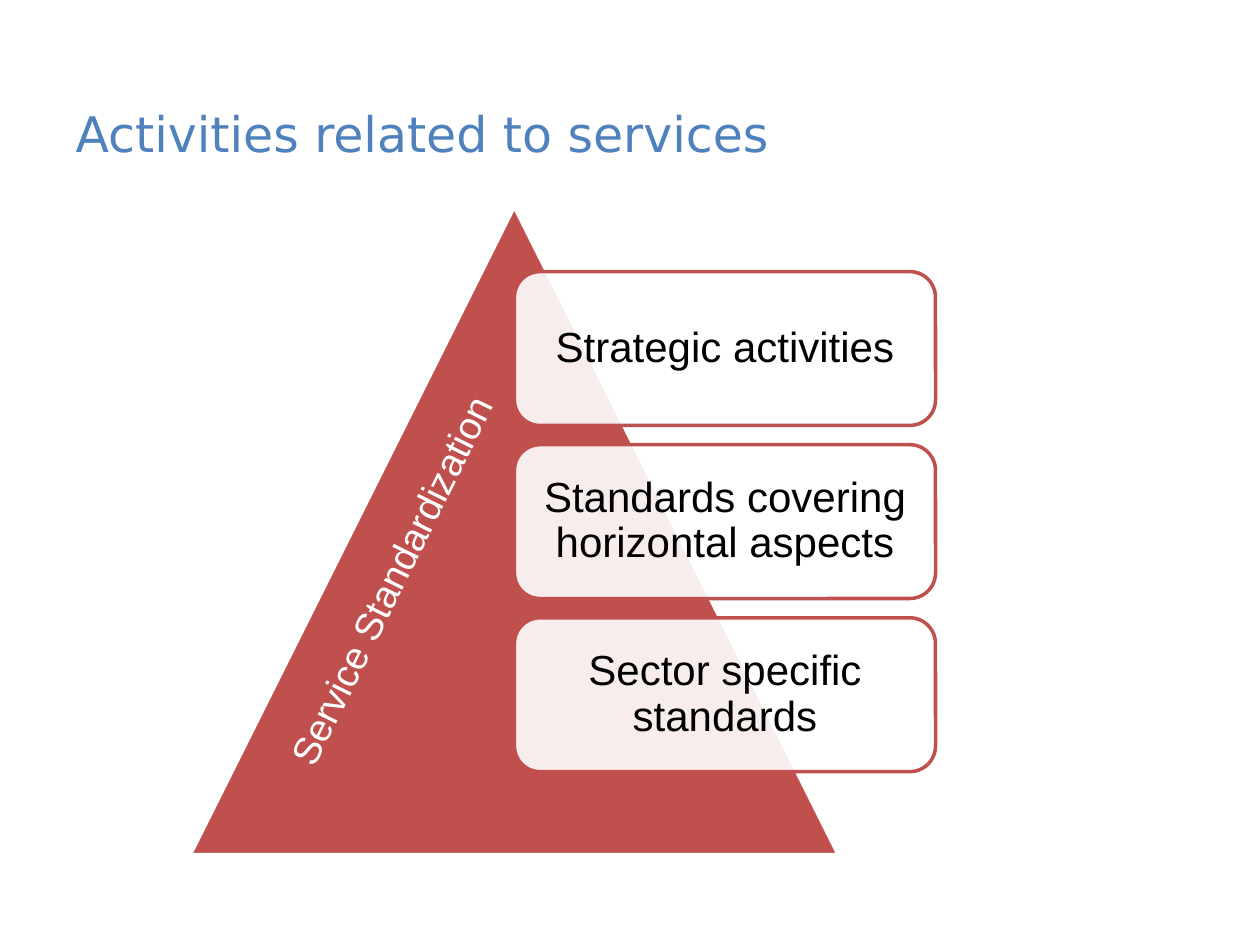
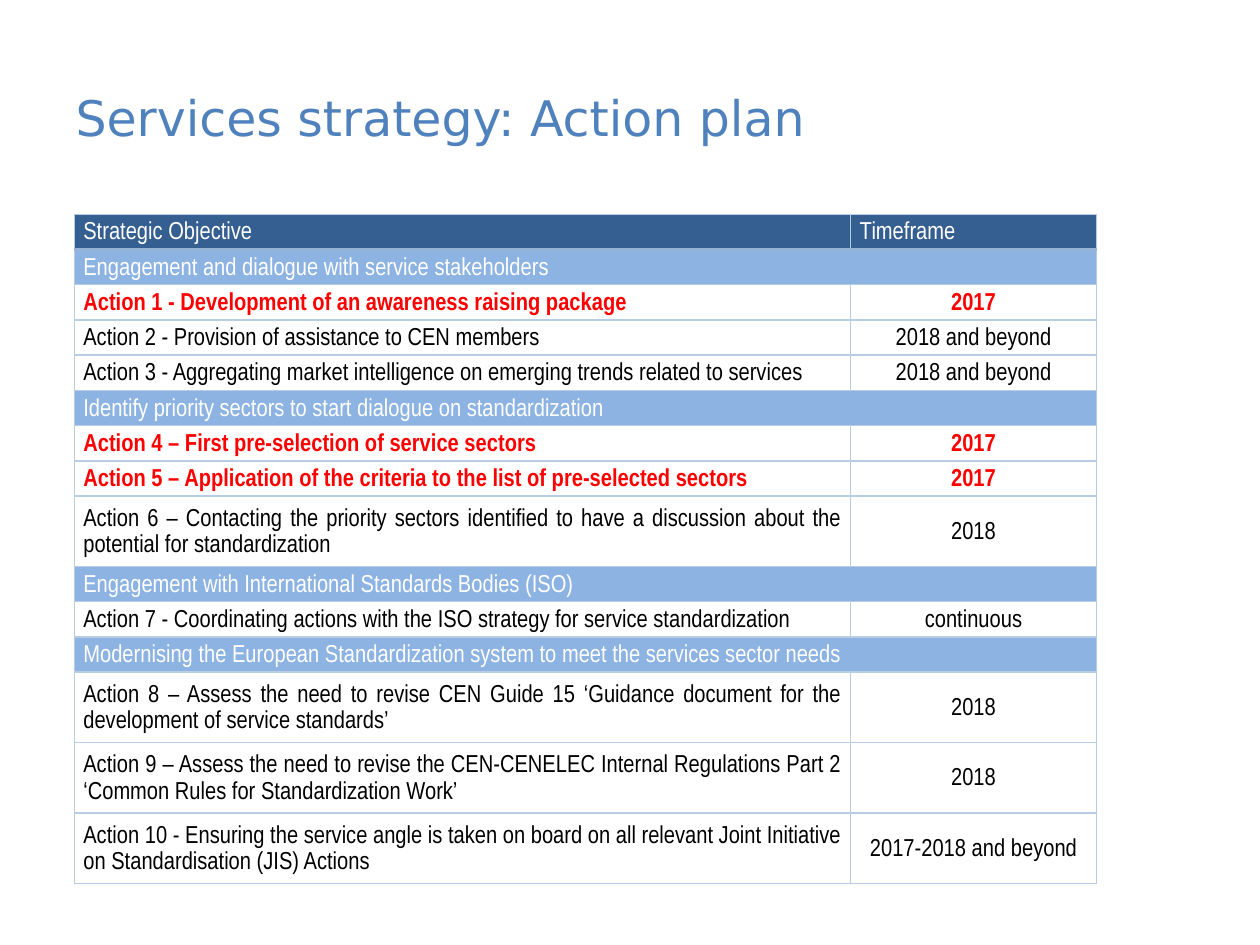
from lxml import etree
from pptx import Presentation
from pptx.dml.color import RGBColor
from pptx.enum.shapes import MSO_SHAPE
from pptx.enum.text import MSO_ANCHOR, PP_ALIGN
from pptx.oxml.ns import qn
from pptx.util import Cm, Pt

TRIANGLE, CARD = MSO_SHAPE.ISOSCELES_TRIANGLE, MSO_SHAPE.ROUNDED_RECTANGLE
MIDDLE = MSO_ANCHOR.MIDDLE
LEFT, CENTER, JUSTIFY = PP_ALIGN.LEFT, PP_ALIGN.CENTER, PP_ALIGN.JUSTIFY
TITLE_ONLY = 5

COLORS = {
    "title": "4F81BD",
    "accent": "C0504D",
    "white": "FFFFFF",
    "text": "000000",
    "header": "365F91",
    "section": "8DB3E2",
    "current": "FF0000",
    "border": "B8CCE4",
    "header_rule": "95B3D7",
}
TITLE_FONT, DIAGRAM_FONT, TABLE_FONT = "DejaVu Sans", "Arial", "Arial Narrow"

ACTIVITIES = [
    "Strategic activities",
    "Standards covering horizontal aspects",
    "Sector specific standards",
]

# Each section holds its actions as (description, timeframe)
PLAN = {
    "Engagement and dialogue with service stakeholders": [
        ("Action 1 - Development of an awareness raising package", "2017"),
        ("Action 2 - Provision of assistance to CEN members", "2018 and beyond"),
        ("Action 3 - Aggregating market intelligence on emerging trends related to services",
         "2018 and beyond"),
    ],
    "Identify priority sectors to start dialogue on standardization": [
        ("Action 4 – First pre-selection of service sectors", "2017"),
        ("Action 5 – Application of the criteria to the list of pre-selected sectors", "2017"),
        ("Action 6 – Contacting the priority sectors identified to have a discussion "
         "about the potential for standardization", "2018"),
    ],
    "Engagement with International Standards Bodies (ISO)": [
        ("Action 7 - Coordinating actions with the ISO strategy for service standardization",
         "continuous"),
    ],
    "Modernising the European Standardization system to meet the services sector needs": [
        ("Action 8 – Assess the need to revise CEN Guide 15 ‘Guidance document for the "
         "development of service standards’", "2018"),
        ("Action 9 – Assess the need to revise the CEN-CENELEC Internal Regulations Part 2 "
         "‘Common Rules for Standardization Work’", "2018"),
        ("Action 10 - Ensuring the service angle is taken on board on all relevant Joint "
         "Initiative on Standardisation (JIS) Actions", "2017-2018 and beyond"),
    ],
}
LONGEST_LINE = 85  # characters that fit one line of the first column


def rgb(color):
    return RGBColor.from_string(COLORS[color])


def write(frame, text, font, size, color, align=LEFT, bold=False):
    """Fill a text frame with one formatted paragraph and return it."""
    frame.text = text
    frame.word_wrap = True
    paragraph = frame.paragraphs[0]
    paragraph.alignment = align
    for run in paragraph.runs:
        run.font.name = font
        run.font.size = Pt(size)
        run.font.bold = bold
        run.font.color.rgb = rgb(color)
    return paragraph


def titled_slide(prs, title, left, top, width, height):
    slide = prs.slides.add_slide(prs.slide_layouts[TITLE_ONLY])
    holder = slide.shapes.title
    holder.left, holder.top = Cm(left), Cm(top)
    holder.width, holder.height = Cm(width), Cm(height)
    write(holder.text_frame, title, TITLE_FONT, 28, "title")
    return slide


def add_outlined(slide, kind, left, top, width, height, fill, line):
    shape = slide.shapes.add_shape(kind, Cm(left), Cm(top), Cm(width), Cm(height))
    shape.shadow.inherit = False
    shape.fill.solid()
    shape.fill.fore_color.rgb = rgb(fill)
    shape.line.color.rgb = rgb(line)
    shape.line.width = Pt(2)
    return shape


def set_opacity(shape, percent):
    color = shape._element.spPr.find(qn("a:solidFill"))[0]
    etree.SubElement(color, qn("a:alpha"), val=str(percent * 1000))


def pyramid(slide, left, top, side):
    """Triangle with a slanted label and cards starting at its axis."""
    add_outlined(slide, TRIANGLE, left, top, side, side, "accent", "white")

    # Cards, separated by an eighth of their height
    card_height = 0.2375 * side
    for index, activity in enumerate(ACTIVITIES):
        card = add_outlined(slide, CARD, left + side / 2,
                            top + 0.1 * side + index * card_height * 1.125,
                            0.65 * side, card_height, "white", "accent")
        set_opacity(card, 90)
        frame = card.text_frame
        frame.vertical_anchor = MIDDLE
        frame.margin_left = frame.margin_right = Cm(0.25)
        frame.margin_top = frame.margin_bottom = Cm(0.25)
        write(frame, activity, DIAGRAM_FONT, 24, "text", CENTER).line_spacing = 0.9

    # Label along the left edge
    label = slide.shapes.add_textbox(Cm(left - 0.46), Cm(top + 6.68), Cm(9.24), Cm(1.2))
    label.rotation = 296.3
    write(label.text_frame, "Service Standardization", DIAGRAM_FONT, 22, "white")


def set_borders(cell, **special):
    """Draw all four borders; special maps a side (T, B) to a colour and width."""
    properties = cell._tc.get_or_add_tcPr()
    for side in "LRTB":
        color, width = special.get(side, ("border", 1))
        line = etree.SubElement(properties, qn(f"a:ln{side}"), w=str(Pt(width)))
        fill = etree.SubElement(line, qn("a:solidFill"))
        etree.SubElement(fill, qn("a:srgbClr"), val=COLORS[color])


def fill_cell(cell, text, color, fill=None, align=LEFT, bold=False, after=0):
    cell.vertical_anchor = MIDDLE
    cell.margin_left = cell.margin_right = Cm(0.18)
    cell.margin_top = cell.margin_bottom = 0
    if fill:
        cell.fill.solid()
        cell.fill.fore_color.rgb = rgb(fill)
    else:
        cell.fill.background()
    paragraph = write(cell.text_frame, text, TABLE_FONT, 14, color, align, bold)
    paragraph.line_spacing = 1.15
    paragraph.space_after = Pt(after)


def plan_table(slide, left, top, column_widths, line_height):
    rows = [("Strategic Objective", "Timeframe")]
    for section, actions in PLAN.items():
        rows += [(section, None), *actions]
    heights = [line_height * (2 if timeframe and len(text) > LONGEST_LINE else 1)
               for text, timeframe in rows]
    table = slide.shapes.add_table(len(rows), 2, Cm(left), Cm(top),
                                   Cm(sum(column_widths)), Cm(sum(heights))).table
    table.first_row = table.horz_banding = False
    for column, width in zip(table.columns, column_widths):
        column.width = Cm(width)

    header_rule = ("header_rule", 1.5)
    for index, (text, timeframe) in enumerate(rows):
        table.rows[index].height = Cm(heights[index])
        objective, period = table.cell(index, 0), table.cell(index, 1)
        special = {0: {"B": header_rule}, 1: {"T": header_rule}}.get(index, {})
        for cell in (objective, period):
            set_borders(cell, **special)
        if index == 0:
            fill_cell(objective, text, "white", "header")
            fill_cell(period, timeframe, "white", "header", after=3)
        elif timeframe is None:
            objective.merge(period)
            fill_cell(objective, text, "white", "section")
        else:
            current = timeframe == "2017"
            color = "current" if current else "text"
            fill_cell(objective, text, color, align=JUSTIFY, bold=current)
            fill_cell(period, timeframe, color, align=CENTER, bold=current, after=3)


def main():
    prs = Presentation()
    prs.slide_width, prs.slide_height = Cm(25.4), Cm(19.05)

    activities = titled_slide(prs, "Activities related to services", 1.27, 1.2, 22.86, 2.96)
    pyramid(activities, left=3.84, top=4.17, side=13.06)

    plan = titled_slide(prs, "Services strategy: Action plan", 1.27, 0.75, 17.63, 3.2)
    plan_table(plan, left=1.5, top=4.32, column_widths=(15.65, 4.95), line_height=0.71)

    prs.save("out.pptx")


if __name__ == "__main__":
    main()
